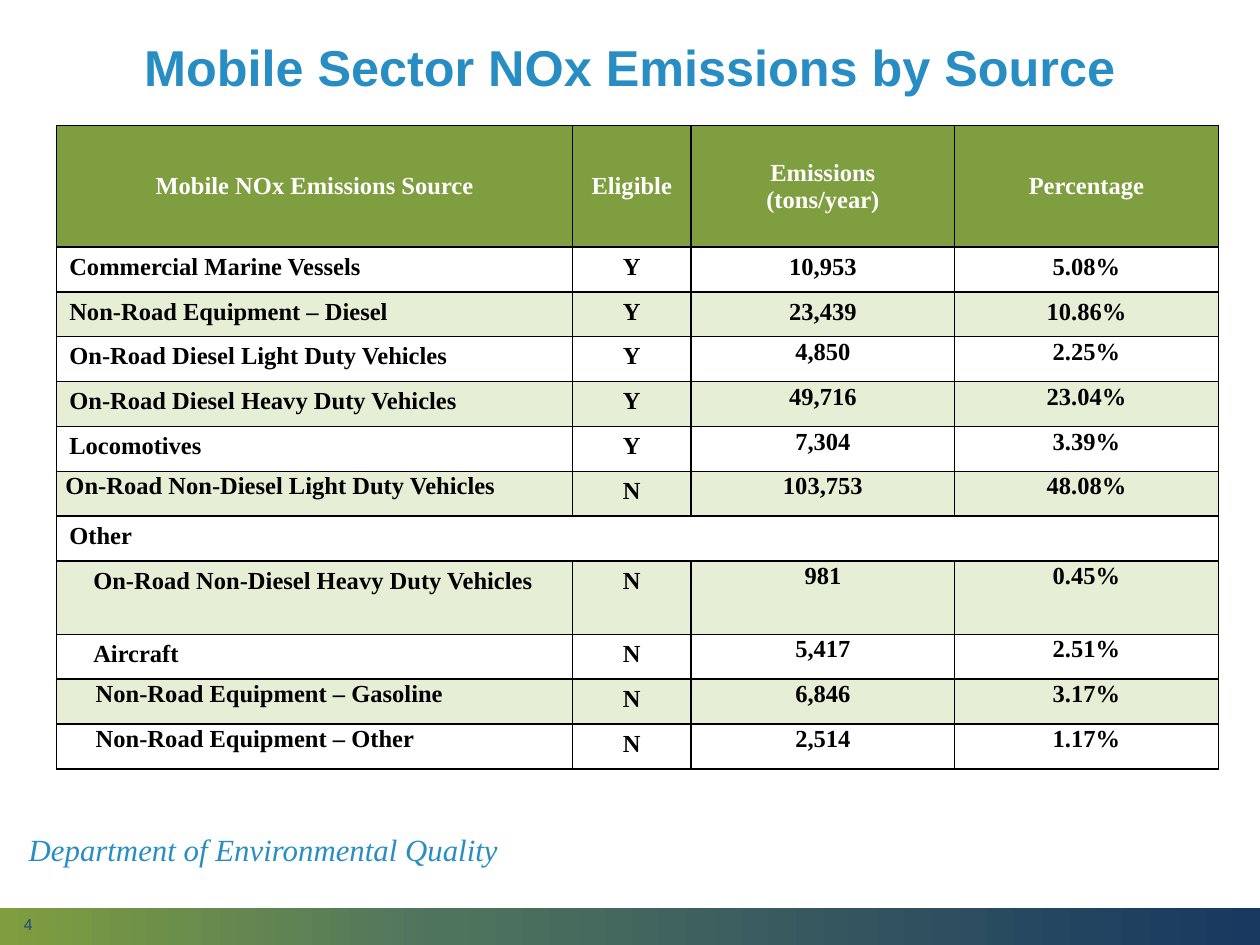
from collections import namedtuple
from copy import deepcopy

from lxml import etree
from pptx import Presentation
from pptx.dml.color import RGBColor
from pptx.enum.shapes import MSO_SHAPE
from pptx.enum.text import MSO_ANCHOR, PP_ALIGN
from pptx.oxml.ns import qn
from pptx.util import Inches, Pt

LEFT, CENTER = PP_ALIGN.LEFT, PP_ALIGN.CENTER
TOP, MIDDLE = MSO_ANCHOR.TOP, MSO_ANCHOR.MIDDLE
RECTANGLE = MSO_SHAPE.RECTANGLE

SLIDE_W, SLIDE_H = Inches(10), Inches(7.5)
SANS, SERIF = "Arial", "Times New Roman"
COLORS = {
    "blue": "288DC2", "number": "1F497D", "green": "7F9E3F", "teal": "4F745E",
    "navy": "183860", "band": "E6EFD6", "white": "FFFFFF", "black": "000000",
}

Box = namedtuple("Box", "left top width height")

COLUMN_SHARES = [4.09, 0.94, 2.09, 2.09]
HEADER_ROW, TALL_ROW, BODY_ROW = 0.96, 0.58, 0.355
HEADERS = ["Mobile NOx Emissions Source", "Eligible",
           "Emissions\n(tons/year)", "Percentage"]
SOURCES = [
    ["Commercial Marine Vessels", "Y", "10,953", "5.08%"],
    ["Non-Road Equipment – Diesel", "Y", "23,439", "10.86%"],
    ["On-Road Diesel Light Duty Vehicles", "Y", "4,850", "2.25%"],
    ["On-Road Diesel Heavy Duty Vehicles", "Y", "49,716", "23.04%"],
    ["Locomotives", "Y", "7,304", "3.39%"],
    ["On-Road Non-Diesel Light Duty Vehicles", "N", "103,753", "48.08%"],
    ["Other"],
    ["On-Road Non-Diesel Heavy Duty Vehicles", "N", "981", "0.45%"],
    ["Aircraft", "N", "5,417", "2.51%"],
    ["Non-Road Equipment – Gasoline", "N", "6,846", "3.17%"],
    ["Non-Road Equipment – Other", "N", "2,514", "1.17%"],
]
OTHER_ROW = 7
TALL_ROWS = {8}
TIGHT_NAME_ROWS = {6, 10, 11}
FIRST_TIGHT_FIGURE_ROW = 3


def share(left, top, width, height):
    """Box given as shares of the slide's size."""
    return Box(int(left * SLIDE_W), int(top * SLIDE_H),
               int(width * SLIDE_W), int(height * SLIDE_H))


def rgb(name):
    return RGBColor.from_string(COLORS[name])


def style_text(frame, size, font, color, align=LEFT, spacing=None,
               bold=False, italic=False):
    for paragraph in frame.paragraphs:
        paragraph.alignment = align
        if spacing:
            paragraph.line_spacing = spacing
        for run in paragraph.runs:
            run.font.size = Pt(size)
            run.font.name = font
            run.font.color.rgb = rgb(color)
            run.font.bold = bold
            run.font.italic = italic


def add_label(slide, box, text, size, font, color, **style):
    frame = slide.shapes.add_textbox(*box).text_frame
    frame.word_wrap = True
    frame.vertical_anchor = MIDDLE
    frame.margin_top = frame.margin_bottom = 0
    frame.text = text
    style_text(frame, size, font, color, **style)


def add_gradient_bar(slide, box, stops):
    bar = slide.shapes.add_shape(RECTANGLE, *box)
    bar.shadow.inherit = False
    bar.line.fill.background()
    bar.fill.gradient()
    bar.fill.gradient_angle = 0
    stop_list = next(bar.element.iter(qn("a:gsLst")))
    for _ in range(len(stops) - len(stop_list)):
        stop_list.append(deepcopy(stop_list[-1]))
    for stop, stop_xml, (position, color) in zip(
            bar.fill.gradient_stops, stop_list, stops):
        stop.color.rgb = rgb(color)
        stop_xml.set("pos", str(position * 1000))


def add_footer(slide, box, department, number):
    """Department line above a gradient bar that carries the page number."""
    bar_height = int(box.height * 0.31)
    bar_top = box.top + box.height - bar_height
    add_gradient_bar(slide, Box(box.left, bar_top, box.width, bar_height),
                     [(0, "green"), (35, "teal"), (100, "navy")])
    add_label(slide, Box(int(box.width * 0.009), bar_top + int(bar_height * 0.2),
                         int(box.width * 0.225), bar_height // 2),
              number, 9, SANS, "number")
    add_label(slide, Box(int(box.width * 0.013), box.top,
                         int(box.width * 0.44), int(box.height * 0.43)),
              department, 17.6, SERIF, "blue", spacing=0.9, italic=True)


def add_borders(cell):
    properties = cell._tc.get_or_add_tcPr()
    for index, side in enumerate(("a:lnL", "a:lnR", "a:lnT", "a:lnB")):
        line = etree.Element(qn(side), w=str(Pt(1)))
        fill = etree.SubElement(line, qn("a:solidFill"))
        etree.SubElement(fill, qn("a:srgbClr"), val=COLORS["black"])
        properties.insert(index, line)


def fill_cell(cell, text, fill, color, align, anchor, tight=False):
    cell.text = text
    cell.vertical_anchor = anchor
    if fill:
        cell.fill.solid()
        cell.fill.fore_color.rgb = rgb(fill)
    else:
        cell.fill.background()
    if tight:
        cell.margin_left = cell.margin_right = Inches(0.07)
        cell.margin_top = cell.margin_bottom = 0
    style_text(cell.text_frame, 14, SERIF, color, align,
               spacing=1.07 if tight else None, bold=True)
    add_borders(cell)


def add_emissions_table(slide, box):
    row_shares = [HEADER_ROW] + [TALL_ROW if row in TALL_ROWS else BODY_ROW
                                 for row in range(1, len(SOURCES) + 1)]
    table = slide.shapes.add_table(len(row_shares), len(HEADERS), *box).table
    for column, part in zip(table.columns, COLUMN_SHARES):
        column.width = int(box.width * part / sum(COLUMN_SHARES))
    for row, part in zip(table.rows, row_shares):
        row.height = int(box.height * part / sum(row_shares))

    for col, header in enumerate(HEADERS):
        fill_cell(table.cell(0, col), header, "green", "white", CENTER, MIDDLE)

    for row, values in enumerate(SOURCES, start=1):
        band = "white" if row % 2 else "band"
        if row == OTHER_ROW:
            band = None
            table.cell(row, 0).merge(table.cell(row, len(HEADERS) - 1))
            for col in range(1, len(HEADERS)):
                add_borders(table.cell(row, col))
        for col, value in enumerate(values):
            tight = (row in TIGHT_NAME_ROWS if col == 0
                     else col > 1 and row >= FIRST_TIGHT_FIGURE_ROW)
            cell = table.cell(row, col)
            fill_cell(cell, value, band, "black", CENTER if col else LEFT,
                      TOP, tight)
            if col == 0 and row > OTHER_ROW:
                indent = Inches(0.24 if tight else 0.19)
                paragraph_xml = cell.text_frame.paragraphs[0]._p
                paragraph_xml.get_or_add_pPr().set("marL", str(indent))


def main():
    deck = Presentation()
    deck.slide_width, deck.slide_height = SLIDE_W, SLIDE_H
    slide = deck.slides.add_slide(deck.slide_layouts[6])
    add_footer(slide, share(0, 0.874, 1, 0.126),
               "Department of Environmental Quality", "4")
    add_label(slide, share(0.069, 0.015, 0.862, 0.119),
              "Mobile Sector NOx Emissions by Source", 28.8, SANS, "blue",
              align=CENTER, spacing=0.9, bold=True)
    add_emissions_table(slide, share(0.045, 0.133, 0.922, 0.681))
    deck.save("out.pptx")


if __name__ == "__main__":
    main()
